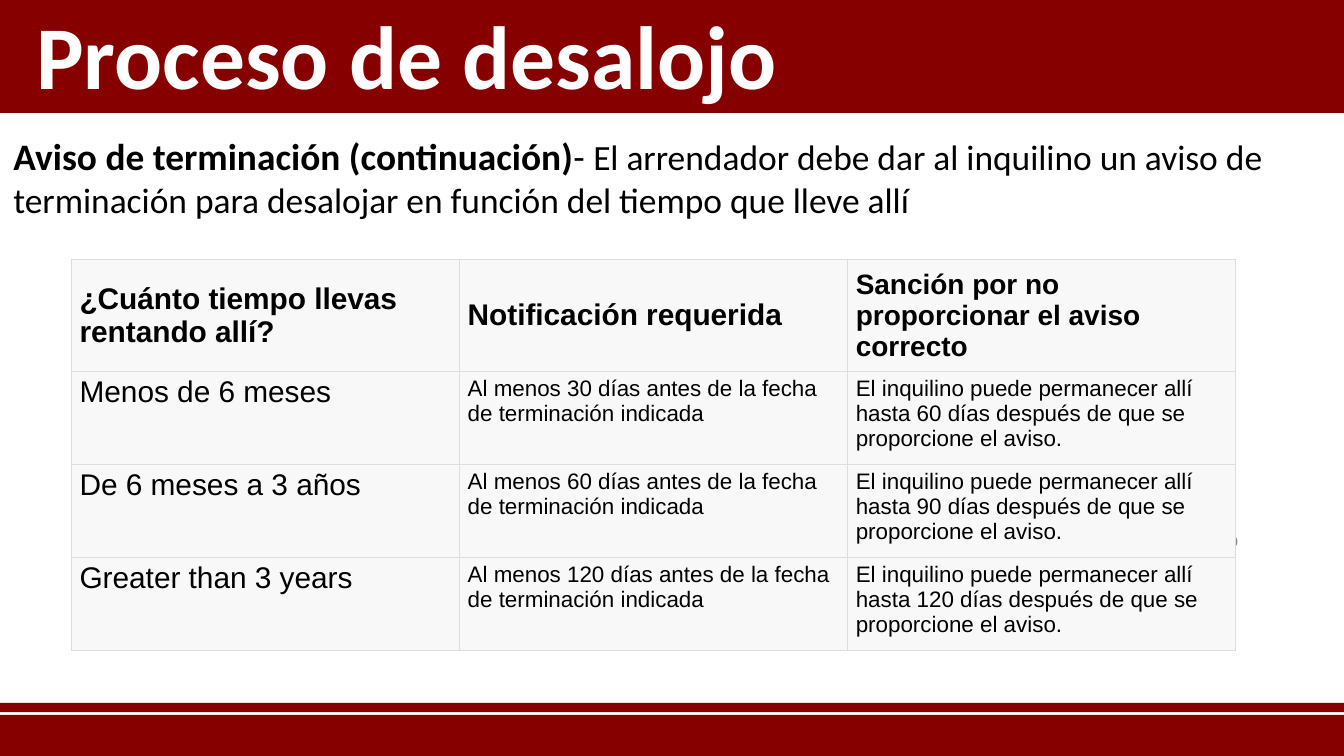
from dataclasses import dataclass

from lxml import etree
from pptx import Presentation
from pptx.dml.color import RGBColor
from pptx.enum.shapes import MSO_SHAPE
from pptx.enum.text import MSO_ANCHOR, MSO_AUTO_SIZE, PP_ALIGN
from pptx.oxml.ns import qn
from pptx.util import Inches, Pt

RECTANGLE = MSO_SHAPE.RECTANGLE
TOP, MIDDLE = MSO_ANCHOR.TOP, MSO_ANCHOR.MIDDLE
LEFT, RIGHT = PP_ALIGN.LEFT, PP_ALIGN.RIGHT
FIXED_SIZE = MSO_AUTO_SIZE.NONE
SLIDE_WIDTH = Inches(10)
SLIDE_HEIGHT = SLIDE_WIDTH * 9 // 16


@dataclass(frozen=True)
class Theme:
    bar: str = "870000"
    title: str = "FFFFFF"
    text: str = "000000"
    number: str = "888888"
    cell: str = "F8F8F8"
    border: str = "DDDDDD"
    heading_font: str = "Calibri"
    table_font: str = "Arial"
    title_size: int = 48
    lead_size: int = 20
    body_size: int = 19
    label_size: int = 16
    narrow_label_size: int = 15
    detail_size: int = 12
    number_size: int = 9
    border_width: float = 0.75


@dataclass(frozen=True)
class Box:
    left: float
    top: float
    width: float
    height: float

    def lengths(self) -> tuple:
        return across(self.left), down(self.top), across(self.width), down(self.height)


@dataclass(frozen=True)
class Style:
    size: float
    color: str
    font: str
    bold: bool = False


@dataclass(frozen=True)
class Tenancy:
    duration: str
    notice_days: int
    stay_days: int

    def texts(self) -> tuple:
        return (
            self.duration,
            f"Al menos {self.notice_days} días antes de la fecha de terminación indicada",
            f"El inquilino puede permanecer allí hasta {self.stay_days} días "
            "después de que se proporcione el aviso.",
        )


THEME = Theme()
BARS = (Box(0, -0.18, 100, 15.11), Box(0, 94.58, 100, 5.42), Box(0, 92.98, 100, 1.24))
TITLE_BOX = Box(1.7, 1.78, 99.9, 13.16)
BODY_BOX = Box(0, 16.71, 97.3, 22.93)
NUMBER_BOX = Box(70.6, 69.6, 22.5, 3.91)
HEADER_ROW, TENANCY_ROW = 14.85, 12.3
HEADERS = (
    "¿Cuánto tiempo llevas rentando allí?",
    "Notificación requerida",
    "Sanción por no proporcionar el aviso correcto",
)
TENANCIES = (
    Tenancy("Menos de 6 meses", 30, 60),
    Tenancy("De 6 meses a 3 años", 60, 90),
    Tenancy("Greater than 3 years", 120, 120),
)
TABLE_BOX = Box(5.3, 34.33, 86.64, HEADER_ROW + TENANCY_ROW * len(TENANCIES))


def across(share: float) -> int:
    return round(SLIDE_WIDTH * share / 100)


def down(share: float) -> int:
    return round(SLIDE_HEIGHT * share / 100)


def style_run(run, style: Style) -> None:
    run.font.size = Pt(style.size)
    run.font.name = style.font
    run.font.bold = style.bold
    run.font.color.rgb = RGBColor.from_string(style.color)


def write_text(shape, box: Box, parts: tuple, anchor=TOP, alignment=LEFT):
    shape.left, shape.top, shape.width, shape.height = box.lengths()
    frame = shape.text_frame
    frame.word_wrap = True
    frame.auto_size = FIXED_SIZE
    frame.vertical_anchor = anchor
    paragraph = frame.paragraphs[0]
    paragraph.alignment = alignment
    for text, style in parts:
        run = paragraph.add_run()
        run.text = text
        style_run(run, style)
    return paragraph


def remove_bullet(paragraph) -> None:
    properties = paragraph._p.get_or_add_pPr()
    properties.set("marL", "0")
    properties.set("indent", "0")
    etree.SubElement(properties, qn("a:buNone"))


def add_bar(slide, box: Box) -> None:
    bar = slide.shapes.add_shape(RECTANGLE, *box.lengths())
    bar.shadow.inherit = False
    bar.fill.solid()
    bar.fill.fore_color.rgb = RGBColor.from_string(THEME.bar)
    bar.line.fill.background()
    slide.shapes.element.insert(2, bar.element)


def add_borders(cell) -> None:
    properties = cell._tc.get_or_add_tcPr()
    for index, side in enumerate(("lnL", "lnR", "lnT", "lnB")):
        line = etree.Element(qn(f"a:{side}"), w=str(Pt(THEME.border_width)))
        fill = etree.SubElement(line, qn("a:solidFill"))
        etree.SubElement(fill, qn("a:srgbClr"), val=THEME.border)
        properties.insert(index, line)


def fill_cell(cell, text: str, style: Style, anchor) -> None:
    cell.margin_left = cell.margin_right = Pt(4.5)
    cell.margin_top = cell.margin_bottom = Pt(2.25)
    cell.vertical_anchor = anchor
    cell.fill.solid()
    cell.fill.fore_color.rgb = RGBColor.from_string(THEME.cell)
    add_borders(cell)
    cell.text_frame.text = text
    style_run(cell.text_frame.paragraphs[0].runs[0], style)


def cell_style(row: int, column: int) -> Style:
    if row == 0:
        size = THEME.narrow_label_size if column == 2 else THEME.label_size
    else:
        size = THEME.label_size if column == 0 else THEME.detail_size
    return Style(size, THEME.text, THEME.table_font, row == 0)


def add_notice_table(slide) -> None:
    rows = (HEADERS, *(tenancy.texts() for tenancy in TENANCIES))
    table = slide.shapes.add_table(len(rows), len(HEADERS), *TABLE_BOX.lengths()).table
    for row, texts in enumerate(rows):
        table.rows[row].height = down(TENANCY_ROW if row else HEADER_ROW)
        for column, text in enumerate(texts):
            anchor = TOP if row else MIDDLE
            fill_cell(table.cell(row, column), text, cell_style(row, column), anchor)


def main() -> None:
    presentation = Presentation()
    presentation.slide_width, presentation.slide_height = SLIDE_WIDTH, SLIDE_HEIGHT
    slide = presentation.slides.add_slide(presentation.slide_layouts[1])
    for bar in BARS:
        add_bar(slide, bar)

    title_style = Style(THEME.title_size, THEME.title, THEME.heading_font, True)
    title = write_text(slide.shapes.title, TITLE_BOX, (("Proceso de desalojo", title_style),), MIDDLE)
    title.line_spacing = 0.82

    lead = Style(THEME.lead_size, THEME.text, THEME.heading_font, True)
    dash = Style(THEME.lead_size, THEME.text, THEME.heading_font)
    plain = Style(THEME.body_size, THEME.text, THEME.heading_font)
    body = write_text(slide.placeholders[1], BODY_BOX, (
        ("Aviso de terminación (continuación)", lead),
        ("- ", dash),
        ("El arrendador debe dar al inquilino un aviso de terminación "
         "para desalojar en función del tiempo que lleve allí", plain),
    ))
    body.space_before = Pt(0)
    remove_bullet(body)

    number = slide.shapes.add_textbox(*NUMBER_BOX.lengths())
    number_style = Style(THEME.number_size, THEME.number, THEME.heading_font)
    write_text(number, NUMBER_BOX, (("20", number_style),), MIDDLE, RIGHT)
    add_notice_table(slide)
    presentation.save("out.pptx")


if __name__ == "__main__":
    main()
